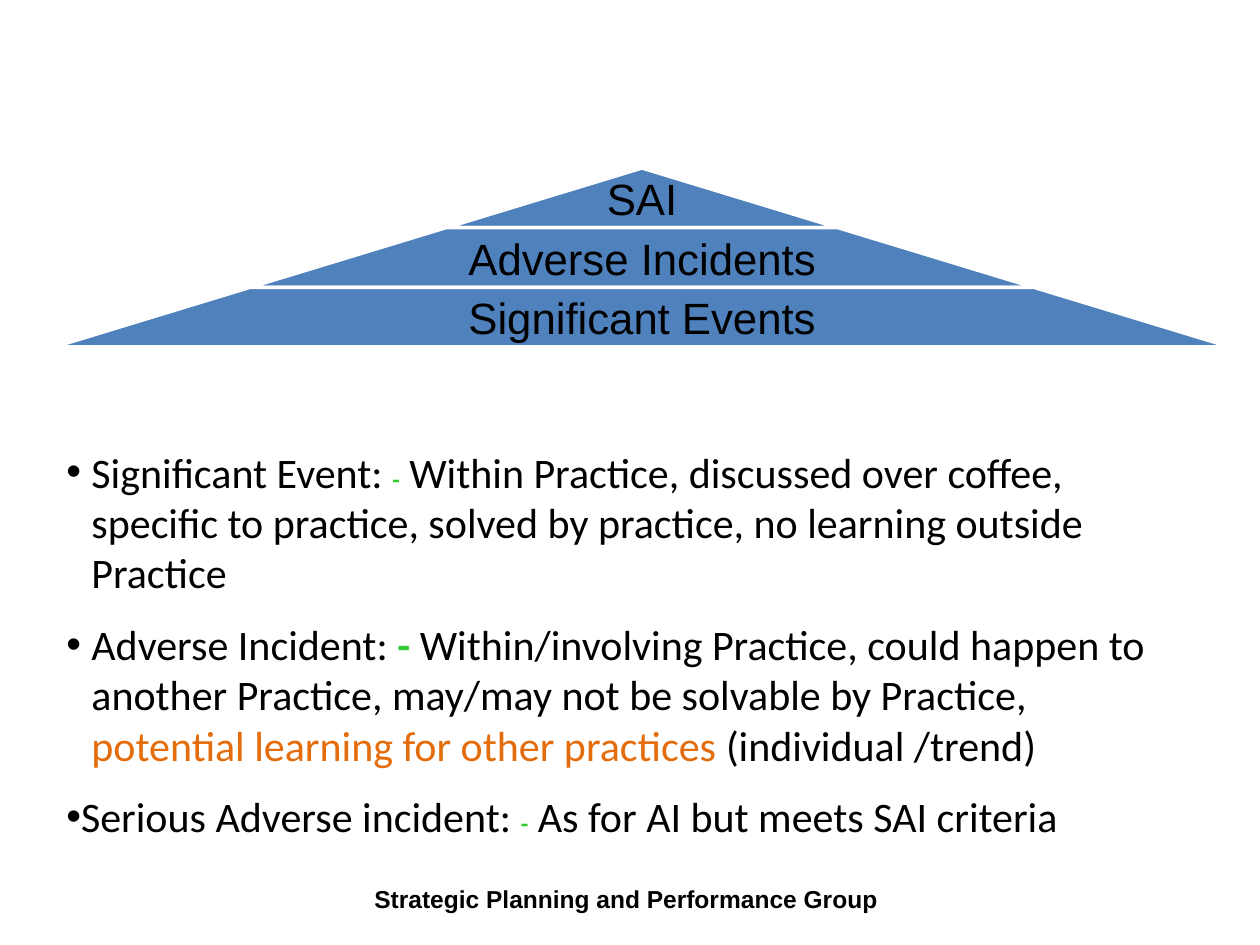
from lxml import etree
from pptx import Presentation
from pptx.dml.color import RGBColor
from pptx.enum.shapes import MSO_SHAPE
from pptx.enum.text import MSO_ANCHOR, PP_ALIGN
from pptx.oxml.ns import qn
from pptx.util import Emu, Pt

TRAPEZOID = MSO_SHAPE.TRAPEZOID
MIDDLE, CENTER = MSO_ANCHOR.MIDDLE, PP_ALIGN.CENTER
PX_PER_INCH = 126
COLORS = {"text": "000000", "tier": "4F81BD", "gap": "FFFFFF",
          "dash": "33CC33", "highlight": "E46C0A"}

TIERS = ["SAI", "Adverse Incidents", "Significant Events"]
PYRAMID = {"left": 54, "top": 168, "width": 1176, "height": 179}
LABEL_SHARE = 0.65
LABEL_INSET = 4

STYLES = {
    "body": {"name": "Calibri", "size": Pt(24), "bold": False, "color": "text"},
    "small dash": {"name": "Calibri", "size": Pt(14), "bold": True, "color": "dash"},
    "dash": {"name": "Calibri", "size": Pt(24), "bold": True, "color": "dash"},
    "highlight": {"name": "Calibri", "size": Pt(24), "bold": False, "color": "highlight"},
    "tier": {"name": "Arial", "size": Pt(25), "bold": False, "color": "text"},
    "footer": {"name": "Arial", "size": Pt(14), "bold": True, "color": "text"},
}

# Each definition: hanging indent in px, then its runs
DEFINITIONS = [
    (25, [("Significant Event: ", "body"), ("-", "small dash"),
          (" Within Practice, discussed over coffee, specific to practice, "
           "solved by practice, no learning outside Practice", "body")]),
    (25, [("Adverse Incident: ", "body"), ("-", "dash"),
          (" Within/involving Practice, could happen to another Practice, "
           "may/may not be solvable by Practice, ", "body"),
          ("potential learning for other practices ", "highlight"),
          ("(individual /trend)", "body")]),
    (0, [("Serious Adverse incident: ", "body"), ("-", "small dash"),
         (" As for AI but meets SAI criteria", "body")]),
]
DEFINITIONS_BOX = (54, 440, 1115, 505)
DEFINITION_GAP = Pt(12)
FOOTER = "Strategic Planning and Performance Group"
FOOTER_BOX = (362, 878, 586, 50)


def px(length):
    return Emu(round(length * 914400 / PX_PER_INCH))


def rgb(color):
    return RGBColor.from_string(COLORS[color])


def add_run(paragraph, text, style):
    run = paragraph.add_run()
    run.text = text
    for key, value in STYLES[style].items():
        if key == "color":
            run.font.color.rgb = rgb(value)
        else:
            setattr(run.font, key, value)


def add_text_frame(slide, box):
    frame = slide.shapes.add_textbox(*map(px, box)).text_frame
    frame.word_wrap = True
    return frame


def add_bullet(paragraph, hanging):
    properties = paragraph._p.get_or_add_pPr()
    properties.set("marL", str(px(hanging)))
    properties.set("indent", str(-px(hanging)))
    etree.SubElement(properties, qn("a:buFont"), typeface="Arial")
    etree.SubElement(properties, qn("a:buChar"), char="•")


def add_pyramid(slide):
    count = len(TIERS)
    height = PYRAMID["height"] / count
    center = PYRAMID["left"] + PYRAMID["width"] / 2
    slope = PYRAMID["width"] / 2 / PYRAMID["height"]
    for level, label in enumerate(TIERS, start=1):
        width = PYRAMID["width"] * level / count
        top = PYRAMID["top"] + (level - 1) * height
        tier = slide.shapes.add_shape(
            TRAPEZOID, *map(px, (center - width / 2, top, width, height)))
        tier.adjustments[0] = slope
        tier.shadow.inherit = False
        tier.fill.solid()
        tier.fill.fore_color.rgb = rgb("tier")
        tier.line.color.rgb = rgb("gap")
        tier.line.width = Pt(2)

        label_width = width if level == 1 else width * LABEL_SHARE
        frame = add_text_frame(slide, (center - label_width / 2, top, label_width, height))
        frame.vertical_anchor = MIDDLE
        for side in ("left", "top", "right", "bottom"):
            setattr(frame, f"margin_{side}", px(LABEL_INSET))
        frame.paragraphs[0].alignment = CENTER
        add_run(frame.paragraphs[0], label, "tier")


def add_definitions(slide):
    frame = add_text_frame(slide, DEFINITIONS_BOX)
    for index, (hanging, runs) in enumerate(DEFINITIONS):
        paragraph = frame.add_paragraph() if index else frame.paragraphs[0]
        add_bullet(paragraph, hanging)
        if index:
            paragraph.space_before = DEFINITION_GAP
        for text, style in runs:
            add_run(paragraph, text, style)


def main():
    presentation = Presentation()
    presentation.slide_width, presentation.slide_height = px(1260), px(945)
    slide = presentation.slides.add_slide(presentation.slide_layouts[6])
    add_run(add_text_frame(slide, FOOTER_BOX).paragraphs[0], FOOTER, "footer")
    add_pyramid(slide)
    add_definitions(slide)
    presentation.save("out.pptx")


if __name__ == "__main__":
    main()
